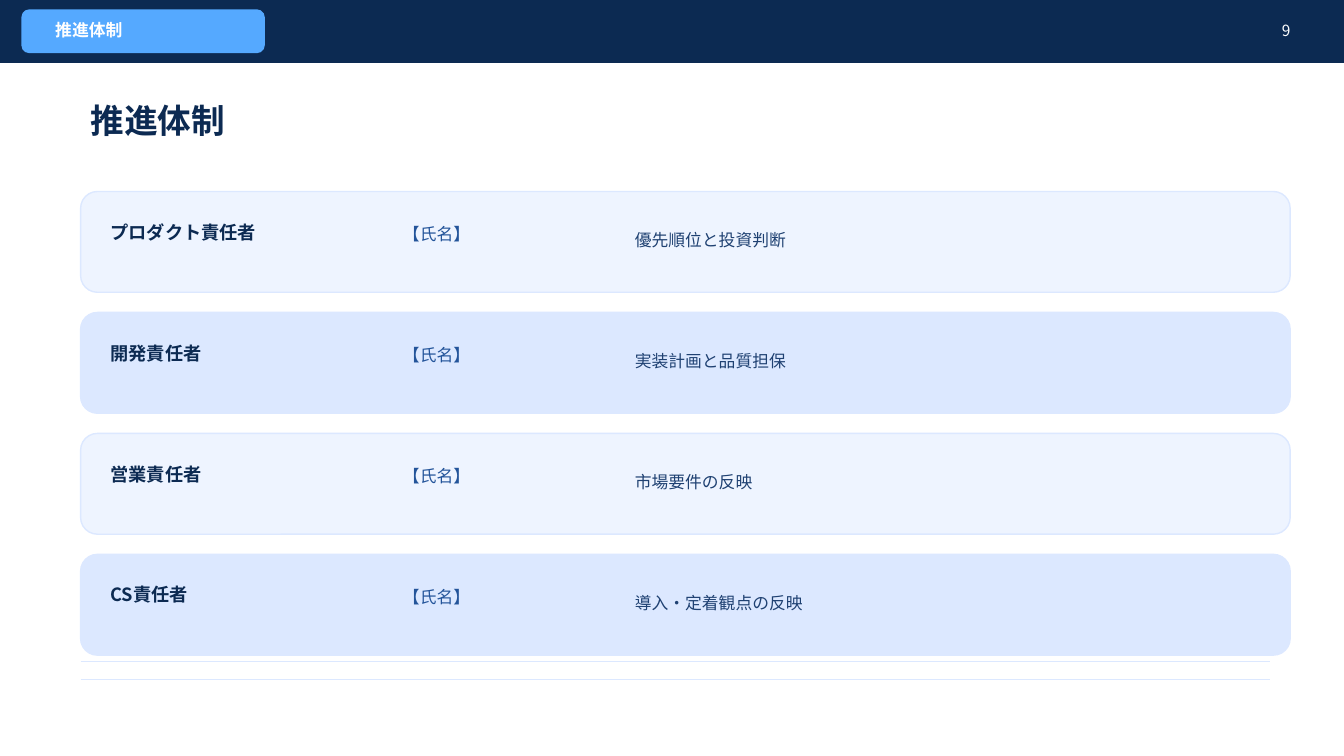
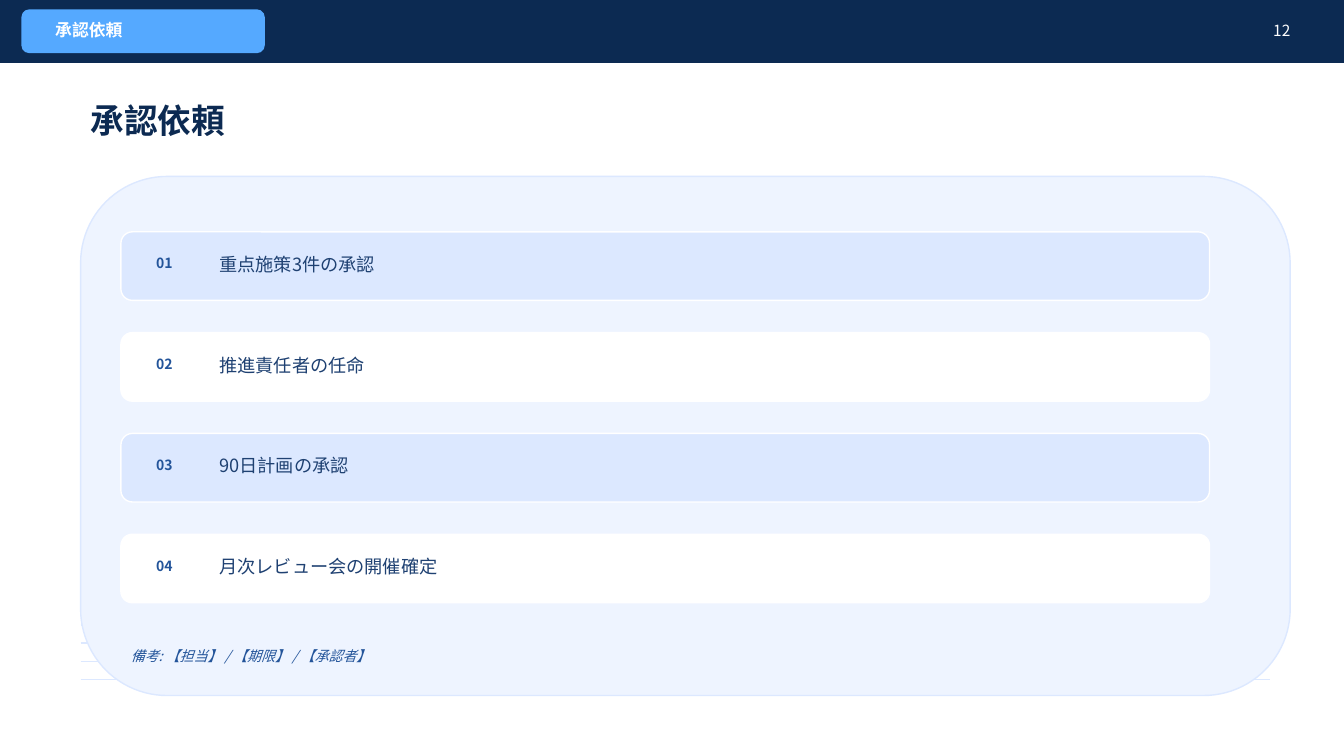
"""Build the project organisation and approval request slides."""
import dataclasses

import lxml.etree
import pptx
import pptx.dml.color
import pptx.enum.shapes
import pptx.enum.text
import pptx.oxml.ns
import pptx.util

Pt = pptx.util.Pt
Shape = pptx.enum.shapes.MSO_SHAPE
Align = pptx.enum.text.PP_ALIGN


@dataclasses.dataclass(frozen=True)
class TextStyle:
    """Look of one kind of text."""
    size: float
    color: str
    bold: bool = False
    italic: bool = False
    latin: str = "Noto Sans CJK JP"


@dataclasses.dataclass(frozen=True)
class Theme:
    """Colours and text styles of the deck."""
    navy: str = "0C2A52"
    sky: str = "55A9FF"
    pale: str = "EEF4FF"
    mist: str = "DCE8FF"
    white: str = "FFFFFF"
    east_asian: str = "Noto Sans CJK JP"
    title: TextStyle = TextStyle(24, "0C2A52", bold=True, latin="Arial Narrow")
    chip: TextStyle = TextStyle(12, "FFFFFF", bold=True)
    page_number: TextStyle = TextStyle(11, "FFFFFF")
    role: TextStyle = TextStyle(13, "0C2A52", bold=True)
    person: TextStyle = TextStyle(12, "23549A")
    duty: TextStyle = TextStyle(12, "1F4172")
    item_number: TextStyle = TextStyle(10, "23549A", bold=True)
    item: TextStyle = TextStyle(13, "1F4172")
    remark: TextStyle = TextStyle(10, "23549A", italic=True)


THEME = Theme()
LEFT = 57.6
CARD_WIDTH = 864
ROLES = [
    ("プロダクト責任者", "【氏名】", "優先順位と投資判断"),
    ("開発責任者", "【氏名】", "実装計画と品質担保"),
    ("営業責任者", "【氏名】", "市場要件の反映"),
    ("CS責任者", "【氏名】", "導入・定着観点の反映"),
]
REQUESTS = [
    "重点施策3件の承認",
    "推進責任者の任命",
    "90日計画の承認",
    "月次レビュー会の開催確定",
]


def rgb(color):
    """Return the colour object for a hex string."""
    return pptx.dml.color.RGBColor.from_string(color)


def write(box, text, style, align=Align.LEFT):
    """Write one styled line into a text box or placeholder."""
    frame = box.text_frame
    frame.word_wrap = True
    frame.auto_size = pptx.enum.text.MSO_AUTO_SIZE.NONE
    frame.vertical_anchor = pptx.enum.text.MSO_ANCHOR.MIDDLE
    para = frame.paragraphs[0]
    para.alignment = align
    span = para.add_run()
    span.text = text
    span.font.size = Pt(style.size)
    span.font.bold = style.bold
    span.font.italic = style.italic
    span.font.color.rgb = rgb(style.color)
    span.font.name = style.latin
    latin = span.font._element.find(pptx.oxml.ns.qn("a:latin"))
    east_asian = lxml.etree.Element(pptx.oxml.ns.qn("a:ea"), typeface=THEME.east_asian)
    latin.addnext(east_asian)


def add_text(page, left, top, width, height, text, style, align=Align.LEFT):
    """Add a text box holding one line."""
    box = page.shapes.add_textbox(Pt(left), Pt(top), Pt(width), Pt(height))
    write(box, text, style, align)


def add_panel(page, left, top, width, height, fill, line, kind=Shape.ROUNDED_RECTANGLE):
    """Add a filled, outlined shape without shadow."""
    panel = page.shapes.add_shape(kind, Pt(left), Pt(top), Pt(width), Pt(height))
    panel.shadow.inherit = False
    panel.fill.solid()
    panel.fill.fore_color.rgb = rgb(fill)
    panel.line.color.rgb = rgb(line)
    panel.line.width = Pt(1)


def add_rule(page, top):
    """Add a thin horizontal line near the foot of the page."""
    rule = page.shapes.add_connector(
        pptx.enum.shapes.MSO_CONNECTOR.STRAIGHT, Pt(LEFT), Pt(top), Pt(907.2), Pt(top))
    rule.line.color.rgb = rgb(THEME.mist)
    rule.line.width = Pt(1)
    lxml.etree.SubElement(rule._element.spPr, pptx.oxml.ns.qn("a:effectLst"))


def add_page(deck, title, number):
    """Add a page with foot lines, top band, chip, page number and title."""
    page = deck.slides.add_slide(deck.slide_layouts.get_by_name("Title Only"))
    for index in range(4):
        add_rule(page, 446.4 + index * 12.96)
    add_panel(page, 0, 0, 960, 44.64, THEME.navy, THEME.navy, Shape.RECTANGLE)
    add_panel(page, 15.84, 7.2, 172.8, 30.24, THEME.sky, THEME.sky)
    add_text(page, 32.4, 12.96, 633.6, 17.28, title, THEME.chip)
    add_text(page, 874.8, 12.96, 54, 17.28, str(number), THEME.page_number, Align.RIGHT)
    heading = page.shapes.title
    heading.left, heading.top = Pt(LEFT), Pt(68.4)
    heading.width, heading.height = Pt(820.8), Pt(34.56)
    write(heading, title, THEME.title)
    return page


def add_role_card(page, top, fill, role, person, duty):
    """Add one card with a role, its holder and the duty."""
    add_panel(page, LEFT, top, CARD_WIDTH, 72, fill, THEME.mist)
    add_text(page, 72, top + 20.16, 194.4, 17.28, role, THEME.role)
    add_text(page, 280.8, top + 21.6, 151.2, 17.28, person, THEME.person)
    add_text(page, 446.4, top + 18, 446.4, 32.4, duty, THEME.duty)


def add_request_row(page, top, fill, number, request):
    """Add one numbered request row."""
    add_panel(page, 86.4, top, 777.6, 48.96, fill, THEME.white)
    add_text(page, 104.4, top + 15.12, 31.68, 14.4, f"{number:02d}", THEME.item_number)
    add_text(page, 149.76, top + 14.4, 691.2, 17.28, request, THEME.item)


def build_organisation(deck):
    """Build the page of responsible roles."""
    page = add_page(deck, "推進体制", 9)
    fills = (THEME.pale, THEME.mist)
    for index, entry in enumerate(ROLES):
        add_role_card(page, 136.8 + index * 86.4, fills[index % 2], *entry)


def build_approval(deck):
    """Build the page of approval requests."""
    page = add_page(deck, "承認依頼", 12)
    add_panel(page, LEFT, 126, CARD_WIDTH, 370.8, THEME.pale, THEME.mist)
    fills = (THEME.mist, THEME.white)
    for index, request in enumerate(REQUESTS):
        add_request_row(page, 165.6 + index * 72, fills[index % 2], index + 1, request)
    add_text(page, 86.4, 460.8, 489.6, 15.84,
             "備考: 【担当】 / 【期限】 / 【承認者】", THEME.remark)


def main():
    """Build and save the deck."""
    deck = pptx.Presentation()
    deck.slide_width, deck.slide_height = Pt(960), Pt(540)
    build_organisation(deck)
    build_approval(deck)
    deck.save("out.pptx")


if __name__ == "__main__":
    main()
